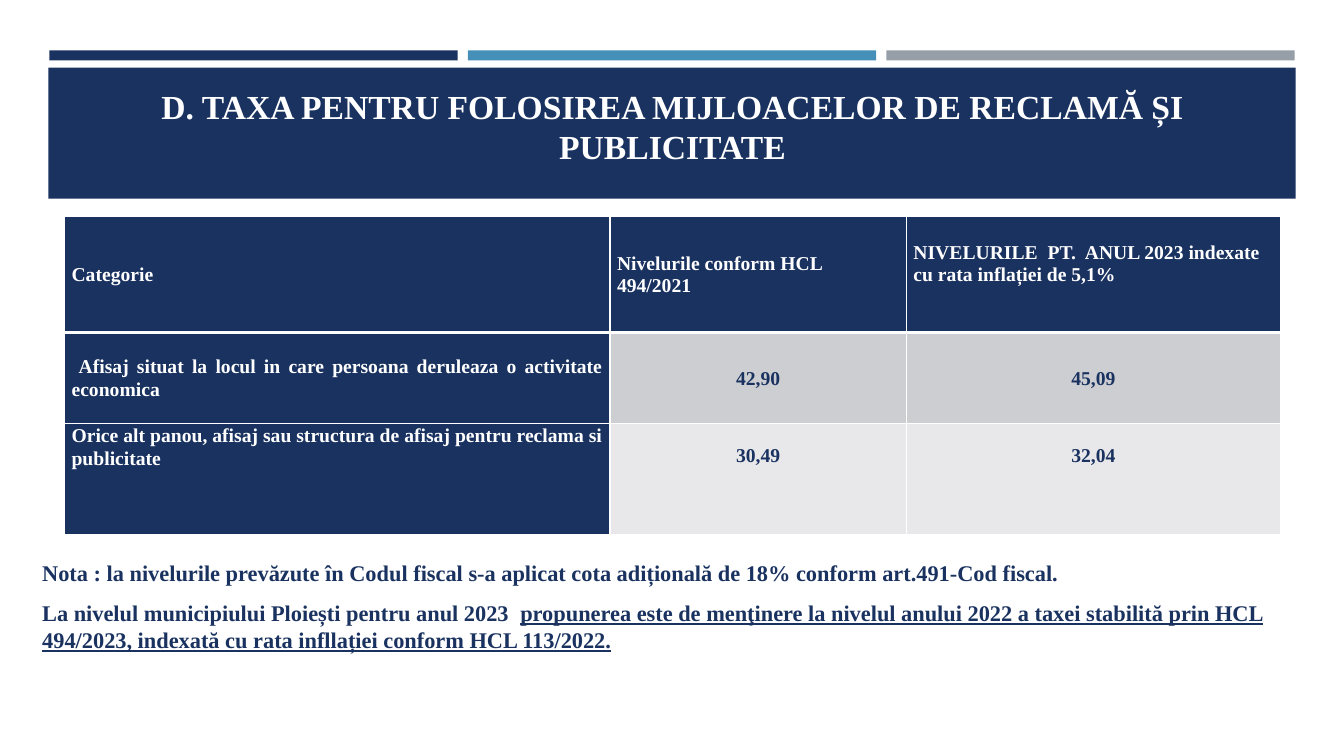
import pptx
import pptx.util
import pptx.dml.color
import pptx.enum.shapes
import pptx.enum.text
import lxml.etree

Inches, Pt = pptx.util.Inches, pptx.util.Pt
ALIGN = pptx.enum.text.PP_ALIGN
ANCHOR = pptx.enum.text.MSO_ANCHOR

# Content
TITLE = "D. TAXA PENTRU FOLOSIREA MIJLOACELOR DE RECLAMĂ ȘI PUBLICITATE"
TABLE = [
    ("Categorie", "Nivelurile conform HCL 494/2021",
     "NIVELURILE  PT.  ANUL 2023 indexate cu rata inflației de 5,1%"),
    (" Afisaj situat la locul in care persoana deruleaza o activitate economica",
     "42,90", "45,09"),
    ("Orice alt panou, afisaj sau structura de afisaj pentru reclama si publicitate",
     "30,49", "32,04"),
]
NOTE = ("Nota : la nivelurile prevăzute în Codul fiscal s-a aplicat cota "
        "adițională de 18% conform art.491-Cod fiscal.")
PROPOSAL = "La nivelul municipiului Ploiești pentru anul 2023  "
PROPOSAL_UNDERLINED = ("propunerea este de menţinere la nivelul anului 2022 a taxei "
                       "stabilită prin HCL 494/2023, indexată cu rata infllației "
                       "conform HCL 113/2022.")

# Look and layout, in inches
COLOURS = {"navy": "1A3260", "blue": "4590B8", "grey": "969FA7", "white": "FFFFFF",
           "band_dark": "CDCED2", "band_light": "E8E8EA"}
FONT = "Times New Roman"
MARGIN, BAR_WIDTH, BAR_STEP = 0.49, 4.05, 4.15
CONTENT_LEFT, CONTENT_WIDTH = 0.64, 12.06
COLUMN_WIDTHS = (5.41, 2.94, 3.71)
ROW_HEIGHTS = (1.15, 0.9, 1.1)
ROW_FILLS = ("navy", "band_dark", "band_light")
ROW_SPACING = (1, 1.07, 2)
HEADER_LIFT = 0.22


def rgb(name):
    return pptx.dml.color.RGBColor.from_string(COLOURS[name])


def write(paragraph, text, size=14, colour="navy", align=ALIGN.LEFT,
          spacing=1, before=0, after=0, underline=False):
    paragraph.alignment = align
    paragraph.line_spacing = spacing
    paragraph.space_before, paragraph.space_after = Pt(before), Pt(after)
    run = paragraph.add_run()
    run.text = text
    font = run.font
    font.name, font.size, font.bold = FONT, Pt(size), True
    font.color.rgb = rgb(colour)
    if underline:
        font.underline = True


def add_bar(left, top, width, height, colour):
    shape = slide.shapes.add_shape(pptx.enum.shapes.MSO_SHAPE.RECTANGLE, Inches(left),
                                   Inches(top), Inches(width), Inches(height))
    shape.shadow.inherit = False
    shape.fill.solid()
    shape.fill.fore_color.rgb = rgb(colour)
    shape.line.fill.background()


def add_text_frame(left, top, width, height, inset_top=0.05):
    box = slide.shapes.add_textbox(Inches(left), Inches(top), Inches(width), Inches(height))
    frame = box.text_frame
    frame.word_wrap = True
    frame.margin_top = Inches(inset_top)
    return frame


def set_borders(cell, **widths):
    properties = cell._tc.get_or_add_tcPr()
    namespace = "{http://schemas.openxmlformats.org/drawingml/2006/main}"
    for index, side in enumerate("LRTB"):
        line = lxml.etree.Element(f"{namespace}ln{side}", w=str(Pt(widths.get(side, 1))))
        fill = lxml.etree.SubElement(line, f"{namespace}solidFill")
        lxml.etree.SubElement(fill, f"{namespace}srgbClr", val=COLOURS["white"])
        properties.insert(index, line)


presentation = pptx.Presentation()
presentation.slide_width, presentation.slide_height = Inches(13.33), Inches(7.5)
slide = presentation.slides.add_slide(presentation.slide_layouts[6])

# Colour bars and title band
for index, colour in enumerate(("navy", "blue", "grey")):
    add_bar(MARGIN + index * BAR_STEP, 0.5, BAR_WIDTH, 0.1, colour)
add_bar(0.48, 0.67, 12.37, 1.3, "navy")
title = add_text_frame(CONTENT_LEFT, 0.77, CONTENT_WIDTH, 1.11, inset_top=0.08)
write(title.paragraphs[0], TITLE, size=24, colour="white", align=ALIGN.CENTER)

# Table of levels
table = slide.shapes.add_table(len(TABLE), len(COLUMN_WIDTHS), Inches(CONTENT_LEFT),
                               Inches(2.15), Inches(CONTENT_WIDTH),
                               Inches(sum(ROW_HEIGHTS))).table
for column, width in zip(table.columns, COLUMN_WIDTHS):
    column.width = Inches(width)
for row_index, texts in enumerate(TABLE):
    table.rows[row_index].height = Inches(ROW_HEIGHTS[row_index])
    header, last = row_index == 0, row_index == len(TABLE) - 1
    for column_index, text in enumerate(texts):
        cell = table.cell(row_index, column_index)
        label = column_index == 0
        cell.margin_left = cell.margin_right = Inches(0.07)
        cell.margin_top = cell.margin_bottom = 0
        cell.vertical_anchor = ANCHOR.TOP if last else ANCHOR.MIDDLE
        cell.fill.solid()
        cell.fill.fore_color.rgb = rgb("navy" if label else ROW_FILLS[row_index])
        set_borders(cell, T=3 if row_index == 1 else 1, B=3 if header else 1)
        align = ALIGN.LEFT if header else ALIGN.JUSTIFY if label else ALIGN.CENTER
        write(cell.text_frame.paragraphs[0], text, align=align,
              colour="white" if header or label else "navy",
              spacing=1.07 if label and not header else ROW_SPACING[row_index])
table.cell(0, 2).margin_bottom = Inches(HEADER_LIFT)

# Notes under the table
notes = add_text_frame(0.32, 5.5, 12.38, 1.2)
write(notes.paragraphs[0], NOTE, size=16, after=6)
proposal = notes.add_paragraph()
for text, underline in ((PROPOSAL, False), (PROPOSAL_UNDERLINED, True)):
    write(proposal, text, size=16, before=3.2, after=6, underline=underline)

presentation.save("out.pptx")
